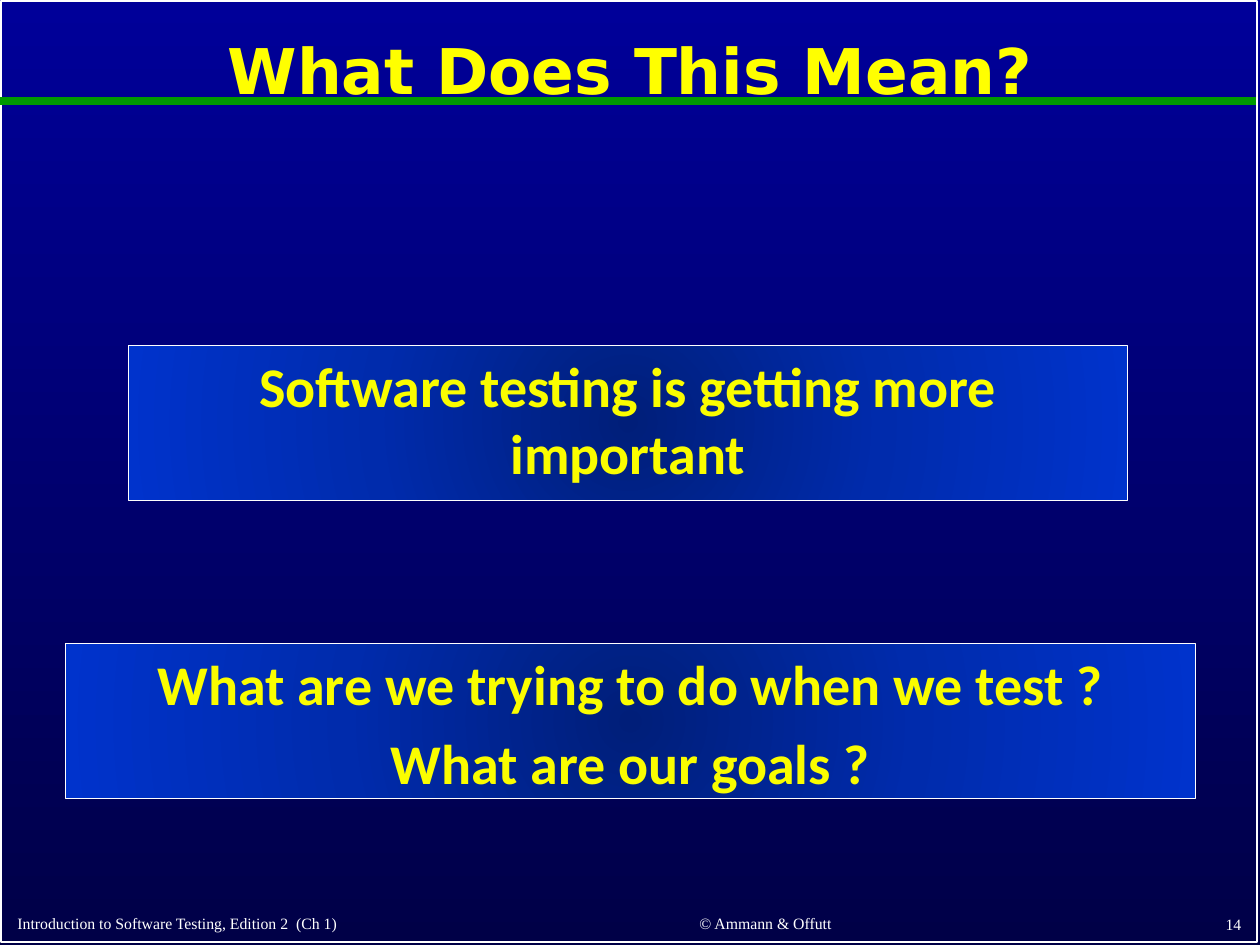
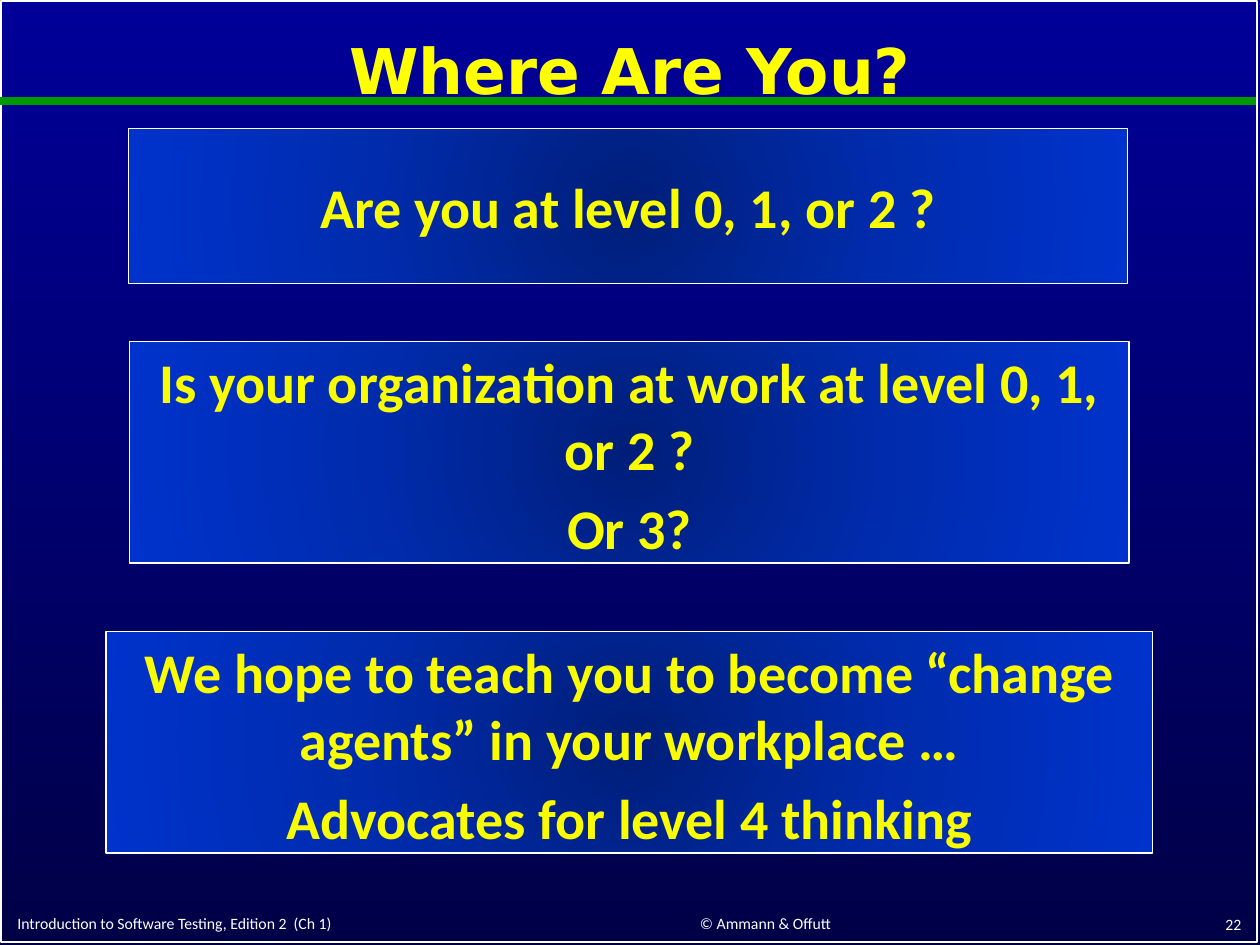
"""Build two slides of a software testing lecture."""
from pptx import Presentation
from pptx.dml.color import RGBColor
from pptx.enum.shapes import MSO_CONNECTOR as CONN, MSO_SHAPE as SHAPE
from pptx.enum.text import MSO_ANCHOR as ANCHOR, MSO_AUTO_SIZE as AUTO, PP_ALIGN as ALIGN
from pptx.oxml import parse_xml
from pptx.oxml.ns import nsdecls, qn
from pptx.util import Pt

WHITE = RGBColor(0xFF, 0xFF, 0xFF)
YELLOW = RGBColor(0xFF, 0xFF, 0x00)
LEMON = RGBColor(0xFA, 0xFD, 0x00)
GREEN = RGBColor(0x00, 0x99, 0x00)
BG_STOPS = RGBColor(0x00, 0x00, 0x99), RGBColor(0x00, 0x00, 0x47)
BOX_STOPS = {
    0: RGBColor(0x00, 0x1E, 0x79),
    50000: RGBColor(0x00, 0x2B, 0xAC),
    100000: RGBColor(0x00, 0x33, 0xCC),
}

TITLE_FONT = {"name": "DejaVu Sans", "size": Pt(36), "bold": True}
BOX_FONT = {"name": "Calibri", "size": Pt(32), "bold": True}
TITLE_PARA = {"alignment": ALIGN.CENTER, "line_spacing": 0.9}
BOX_PARA = {"alignment": ALIGN.CENTER, "space_before": Pt(6.4)}

COURSE = "Introduction to Software Testing, Edition 2  (Ch 1)"
AUTHORS = "© Ammann & Offutt"


def apply(obj, formats):
    for name, value in formats.items():
        setattr(obj, name, value)


def place(shape, left, top, width, height):
    apply(shape, {"left": Pt(left), "top": Pt(top), "width": Pt(width), "height": Pt(height)})


def write(tf, lines, color, font, para, anchor):
    apply(tf, {"word_wrap": True, "auto_size": AUTO.NONE, "vertical_anchor": anchor})
    for i, line in enumerate(lines):
        p = tf.add_paragraph() if i else tf.paragraphs[0]
        apply(p, para)
        r = p.add_run()
        r.text = line
        apply(r.font, font)
        r.font.color.rgb = color


def fill_radial(shape, stops):
    shape.fill.gradient()
    old = shape._element.spPr.find(qn("a:gradFill"))
    gs = "".join(f'<a:gs pos="{pos}"><a:srgbClr val="{rgb}"/></a:gs>' for pos, rgb in stops.items())
    new = parse_xml(
        f'<a:gradFill {nsdecls("a")} rotWithShape="1"><a:gsLst>{gs}</a:gsLst>'
        '<a:path path="circle"><a:fillToRect l="50000" t="50000" r="50000" b="50000"/></a:path>'
        "</a:gradFill>"
    )
    old.getparent().replace(old, new)


def set_background(prs):
    fill = prs.slide_master.background.fill
    fill.gradient()
    fill.gradient_angle = 270
    for stop, rgb in zip(fill.gradient_stops, BG_STOPS):
        stop.color.rgb = rgb


def add_rect(s, box, line_width):
    sp = s.shapes.add_shape(SHAPE.RECTANGLE, *map(Pt, box))
    sp.shadow.inherit = False
    sp.line.color.rgb = WHITE
    sp.line.width = Pt(line_width)
    return sp


def add_rule(s):
    rule = s.shapes.add_connector(CONN.STRAIGHT, 0, Pt(57.6), Pt(718), Pt(57.6))
    rule.line.color.rgb = GREEN
    rule.line.width = Pt(4.5)
    rule._element.spPr.append(parse_xml(f'<a:effectLst {nsdecls("a")}/>'))


def add_title(s, text):
    title = s.shapes.title
    place(title, 3.6, 8, 712.8, 68.4)
    write(title.text_frame, [text], YELLOW, TITLE_FONT, TITLE_PARA, ANCHOR.MIDDLE)
    s.shapes._spTree.append(title._element)


def add_footers(s, number, font_name):
    font = {"name": font_name, "size": Pt(9)}
    footers = [
        (COURSE, (2.9, 517, 302.4, 19.4), ALIGN.LEFT),
        (AUTHORS, (323.3, 516.2, 228.2, 20.2), ALIGN.CENTER),
        (str(number), (566.6, 516.2, 149.8, 20.9), ALIGN.RIGHT),
    ]
    for text, box, align in footers:
        tb = s.shapes.add_textbox(*map(Pt, box))
        write(tb.text_frame, [text], WHITE, font, {"alignment": align}, ANCHOR.BOTTOM)


def add_slide(prs, title, number, footer_font):
    s = prs.slides.add_slide(prs.slide_layouts[5])
    add_rect(s, (0.7, 0.7, 717.8, 537.8), 1).fill.background()
    add_rule(s)
    add_title(s, title)
    add_footers(s, number, footer_font)
    return s


def add_message(s, box, *lines, anchor=ANCHOR.TOP):
    sp = add_rect(s, box, 0.75)
    fill_radial(sp, BOX_STOPS)
    write(sp.text_frame, lines, LEMON, BOX_FONT, BOX_PARA, anchor)


def main():
    prs = Presentation()
    prs.slide_width, prs.slide_height = Pt(720), Pt(540)
    set_background(prs)

    s = add_slide(prs, "What Does This Mean?", 14, "Times New Roman")
    add_message(s, (73.4, 197.3, 571, 88.6), "Software testing is getting more important")
    add_message(s, (37.4, 367.9, 645.8, 88.6),
                "What are we trying to do when we test ?", "What are our goals ?")

    s = add_slide(prs, "Where Are You?", 22, "Calibri")
    add_message(s, (73.4, 73.4, 571, 88.6), "Are you at level 0, 1, or 2 ?", anchor=ANCHOR.MIDDLE)
    add_message(s, (74.2, 195.1, 571, 126.7),
                "Is your organization at work at level 0, 1, or 2 ?", "Or 3?")
    add_message(s, (60.5, 360.7, 598.3, 126.7),
                "We hope to teach you to become “change agents” in your workplace …",
                "Advocates for level 4 thinking")
    prs.save("out.pptx")


if __name__ == "__main__":
    main()
